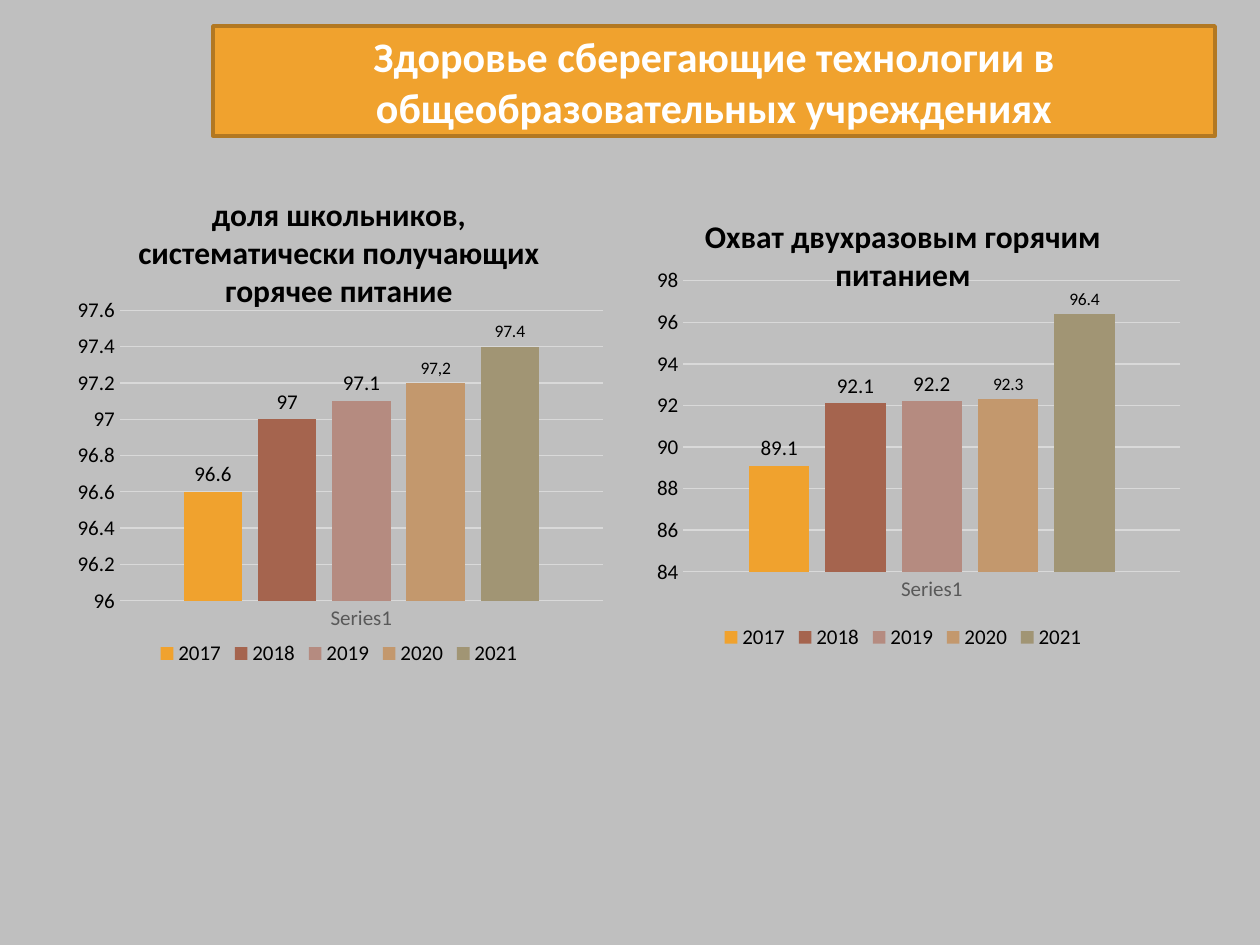
from dataclasses import dataclass

import pptx
import pptx.chart.data
import pptx.dml.color
import pptx.enum.chart
import pptx.enum.shapes
import pptx.enum.text
import pptx.oxml
import pptx.oxml.ns
import pptx.util
from lxml import etree

RGBColor = pptx.dml.color.RGBColor
BACKGROUND = RGBColor(0xBF, 0xBF, 0xBF)
ORANGE = RGBColor(0xF0, 0xA2, 0x2E)
BANNER_EDGE = RGBColor(0xB2, 0x78, 0x22)
WHITE = RGBColor(0xFF, 0xFF, 0xFF)
BLACK = RGBColor(0, 0, 0)
GREY = RGBColor(0x59, 0x59, 0x59)
GRID = RGBColor(0xD9, 0xD9, 0xD9)
YEAR_COLORS = {
    "2017": ORANGE,
    "2018": RGBColor(0xA5, 0x64, 0x4E),
    "2019": RGBColor(0xB5, 0x8B, 0x80),
    "2020": RGBColor(0xC3, 0x98, 0x6D),
    "2021": RGBColor(0xA1, 0x95, 0x74),
}
LABEL_SIZES = (12, 12, 12, 10, 10)
EMU_PER_PX = 914400 / 126


@dataclass(frozen=True)
class Box:
    left: int
    top: int
    width: int
    height: int

    def emu(self) -> tuple[int, ...]:
        return tuple(px(v) for v in (self.left, self.top, self.width, self.height))


@dataclass(frozen=True)
class MealChart:
    title: str
    box: Box
    plot: tuple[float, float, float, float]
    scale: tuple[float, float, float]
    values: tuple[float, ...]


MEAL_CHARTS = (
    MealChart("доля школьников, систематически получающих горячее питание",
              Box(58, 170, 562, 501), (0.11, 0.28, 0.86, 0.58),
              (96, 97.6, 0.2), (96.6, 97, 97.1, 97.2, 97.4)),
    MealChart("Охват двухразовым горячим питанием",
              Box(614, 193, 578, 462), (0.12, 0.19, 0.86, 0.63),
              (84, 98, 2), (89.1, 92.1, 92.2, 92.3, 96.4)),
)


def px(length: int) -> int:
    return round(length * EMU_PER_PX)


def set_font(font, size: int, color: RGBColor = BLACK, bold: bool = False) -> None:
    formats = {"name": "Calibri", "size": pptx.util.Pt(size), "bold": bold}
    for name, value in formats.items():
        setattr(font, name, value)
    font.color.rgb = color


def set_line(line, color: RGBColor, width: float) -> None:
    line.color.rgb = color
    line.width = pptx.util.Pt(width)


def add_banner(slide, text: str, box: Box) -> None:
    shape = slide.shapes.add_shape(
        pptx.enum.shapes.MSO_SHAPE.RECTANGLE, *box.emu())
    shape.shadow.inherit = False
    shape.fill.solid()
    shape.fill.fore_color.rgb = ORANGE
    set_line(shape.line, BANNER_EDGE, 2)
    frame = shape.text_frame
    frame.word_wrap = True
    frame.vertical_anchor = pptx.enum.text.MSO_ANCHOR.MIDDLE
    paragraph = frame.paragraphs[0]
    paragraph.alignment = pptx.enum.text.PP_ALIGN.CENTER
    run = paragraph.add_run()
    run.text = text
    set_font(run.font, 24, WHITE, bold=True)


def place_plot(chart, plot: tuple[float, float, float, float]) -> None:
    """Fix the inner plot area at fractions of the chart size."""
    qn = pptx.oxml.ns.qn
    plot_area = chart.plots[0]._element.getparent()
    for old in plot_area.findall(qn("c:layout")):
        plot_area.remove(old)
    layout = etree.Element(qn("c:layout"))
    manual = etree.SubElement(layout, qn("c:manualLayout"))
    settings = {"layoutTarget": "inner", "xMode": "edge", "yMode": "edge",
                **dict(zip("xywh", plot))}
    for name, value in settings.items():
        etree.SubElement(manual, qn(f"c:{name}")).set("val", str(value))
    plot_area.insert(0, layout)


def format_axes(chart, scale: tuple[float, float, float]) -> None:
    for axis, color in ((chart.category_axis, GREY), (chart.value_axis, BLACK)):
        axis.major_tick_mark = pptx.enum.chart.XL_TICK_MARK.NONE
        axis.minor_tick_mark = pptx.enum.chart.XL_TICK_MARK.NONE
        set_font(axis.tick_labels.font, 12, color)
    set_line(chart.category_axis.format.line, GRID, 0.75)
    value_axis = chart.value_axis
    names = ("minimum_scale", "maximum_scale", "major_unit")
    for name, value in zip(names, scale):
        setattr(value_axis, name, value)
    value_axis.format.line.fill.background()
    set_line(value_axis.major_gridlines.format.line, GRID, 0.75)


def add_meal_chart(slide, meal: MealChart):
    data = pptx.chart.data.CategoryChartData()
    data.categories = ["Series1"]
    for year, value in zip(YEAR_COLORS, meal.values):
        data.add_series(year, [value])
    chart = slide.shapes.add_chart(
        pptx.enum.chart.XL_CHART_TYPE.COLUMN_CLUSTERED, *meal.box.emu(), data).chart
    set_font(chart.font, 10)
    chart.has_title = True
    title = chart.chart_title.text_frame
    title.text = meal.title
    set_font(title.paragraphs[0].runs[0].font, 18, bold=True)
    chart.has_legend = True
    chart.legend.position = pptx.enum.chart.XL_LEGEND_POSITION.BOTTOM
    chart.legend.include_in_layout = False
    set_font(chart.legend.font, 12)
    format_axes(chart, meal.scale)
    place_plot(chart, meal.plot)

    plot = chart.plots[0]
    for name, value in {"gap_width": 219, "overlap": -27,
                        "vary_by_categories": False}.items():
        setattr(plot, name, value)
    for series, color, size in zip(plot.series, YEAR_COLORS.values(), LABEL_SIZES):
        series.invert_if_negative = False
        series.format.fill.solid()
        series.format.fill.fore_color.rgb = color
        labels = series.data_labels
        labels.show_value = True
        labels.position = pptx.enum.chart.XL_LABEL_POSITION.OUTSIDE_END
        set_font(labels.font, size)
    return chart


def main() -> None:
    presentation = pptx.Presentation()
    presentation.slide_width = px(1260)
    presentation.slide_height = px(945)
    slide = presentation.slides.add_slide(presentation.slide_layouts[6])
    slide.background.fill.solid()
    slide.background.fill.fore_color.rgb = BACKGROUND
    add_banner(slide, "Здоровье сберегающие технологии в общеобразовательных учреждениях",
               Box(213, 26, 1002, 110))
    charts = [add_meal_chart(slide, meal) for meal in MEAL_CHARTS]

    label = charts[0].plots[0].series[3].points[0].data_label
    label.text_frame.text = "97,2"
    label.position = pptx.enum.chart.XL_LABEL_POSITION.OUTSIDE_END
    set_font(label.text_frame.paragraphs[0].runs[0].font, 10)
    presentation.save("out.pptx")


if __name__ == "__main__":
    main()
